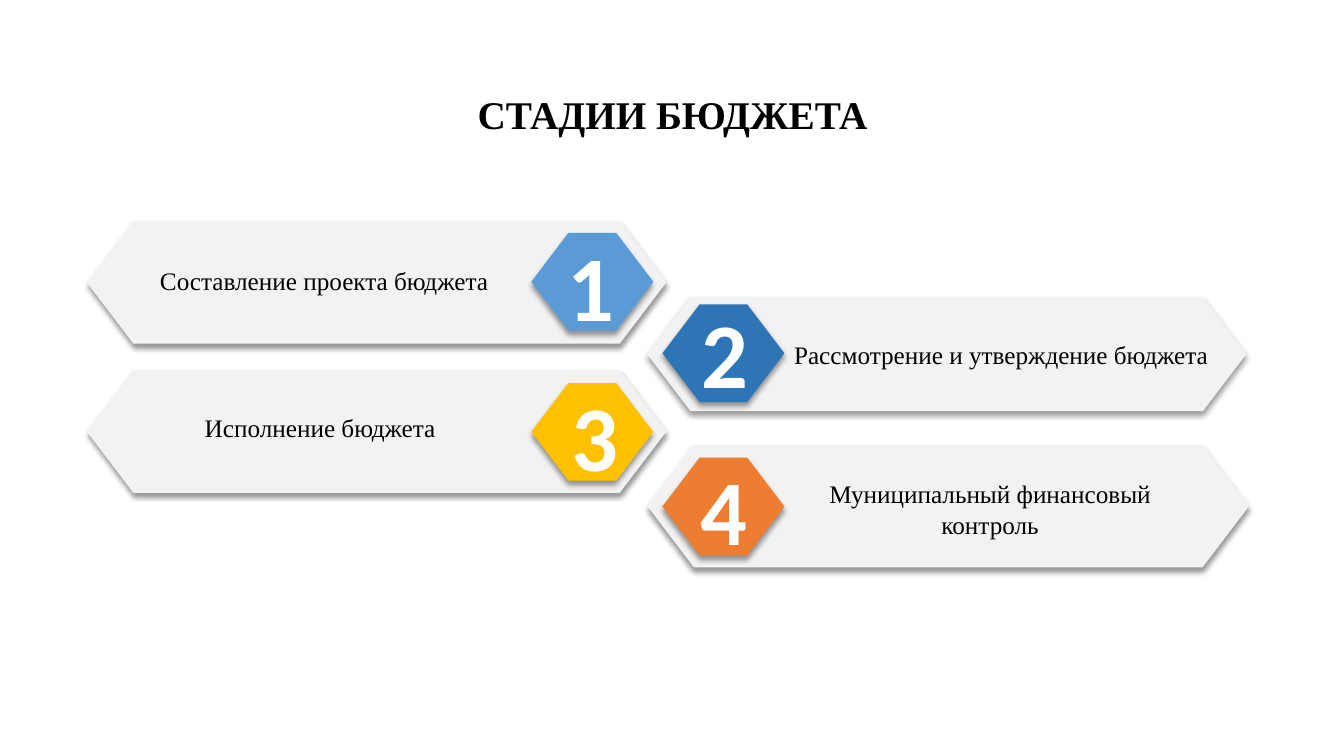
from lxml.etree import SubElement
from pptx import Presentation
from pptx.dml.color import RGBColor
from pptx.enum.shapes import MSO_SHAPE
from pptx.enum.text import MSO_ANCHOR, MSO_AUTO_SIZE, PP_ALIGN
from pptx.oxml.ns import qn
from pptx.util import Inches, Pt

COLORS = {
    "text": "000000",
    "white": "FFFFFF",
    "panel": "F2F2F2",
    "light_blue": "5B9BD5",
    "blue": "2E75B6",
    "yellow": "FFC000",
    "orange": "ED7D31",
}
BADGE_SIZE = (1.21, 0.97)
NUMBER_SIZE = (0.52, 0.6)
STAGES = [
    ("2", "Рассмотрение и утверждение бюджета", "blue",
     (6.42, 2.95, 5.94, 1.13), (6.57, 3.02), (7.65, 3.32, 4.56, 0.4), (6.93, 3.19)),
    ("4", "Муниципальный финансовый контроль", "orange",
     (6.42, 4.41, 5.97, 1.22), (6.57, 4.54), (7.68, 4.7, 4.28, 0.71), (6.92, 4.75)),
    ("1", "Составление проекта бюджета", "light_blue",
     (0.86, 2.19, 5.75, 1.22), (5.27, 2.31), (1.14, 2.58, 4.15, 0.4), (5.6, 2.52)),
    ("3", "Исполнение бюджета", "yellow",
     (0.86, 3.67, 5.75, 1.22), (5.27, 3.8), (1.1, 4.04, 4.15, 0.4), (5.64, 4.01)),
]


def inches(box):
    return [Inches(length) for length in box]


def write(frame, text, size=18, font="Times New Roman", color="text", bold=False,
          anchor=MSO_ANCHOR.TOP, inset=None, before=0, line_spacing=1.0,
          auto_size=MSO_AUTO_SIZE.NONE):
    frame.word_wrap = True
    frame.auto_size = auto_size
    frame.vertical_anchor = anchor
    if inset is not None:
        frame.margin_left = frame.margin_right = Inches(inset)
        frame.margin_top = frame.margin_bottom = Inches(inset)
    paragraph = frame.paragraphs[0]
    paragraph.alignment = PP_ALIGN.CENTER
    paragraph.space_before = Pt(before)
    paragraph.line_spacing = line_spacing
    run = paragraph.add_run()
    run.text = text
    run.font.size = Pt(size)
    run.font.name = font
    run.font.bold = bold
    run.font.color.rgb = RGBColor.from_string(COLORS[color])


def add_shadow(shape):
    shape.shadow.inherit = False
    effects = shape._element.spPr.find(qn("a:effectLst"))
    shadow = SubElement(effects, qn("a:outerShdw"), blurRad=str(Pt(4)),
                        dist=str(Pt(3)), dir="5400000", algn="t", rotWithShape="0")
    tint = SubElement(shadow, qn("a:srgbClr"), val=COLORS["text"])
    SubElement(tint, qn("a:alpha"), val="40000")


def add_hexagon(slide, box, color):
    hexagon = slide.shapes.add_shape(MSO_SHAPE.HEXAGON, *inches(box))
    hexagon.adjustments[0] = 0.38
    hexagon.fill.solid()
    hexagon.fill.fore_color.rgb = RGBColor.from_string(COLORS[color])
    hexagon.line.fill.background()
    add_shadow(hexagon)


def add_text(slide, box, text, **style):
    write(slide.shapes.add_textbox(*inches(box)).text_frame, text, **style)


def add_title(slide, box, text):
    title = slide.shapes.title
    title.left, title.top, title.width, title.height = inches(box)
    write(title.text_frame, text, size=28, bold=True,
          anchor=MSO_ANCHOR.MIDDLE, line_spacing=0.9)


def main():
    deck = Presentation()
    deck.slide_width, deck.slide_height = Inches(13.33), Inches(7.5)
    slide = deck.slides.add_slide(deck.slide_layouts[5])
    add_title(slide, (0.16, 0.95, 13.02, 0.42), "СТАДИИ БЮДЖЕТА")
    for number, stage, color, panel, badge, label, digit in STAGES:
        add_hexagon(slide, panel, "panel")
        add_hexagon(slide, badge + BADGE_SIZE, color)
        add_text(slide, label, stage, auto_size=MSO_AUTO_SIZE.SHAPE_TO_FIT_TEXT)
        add_text(slide, digit + NUMBER_SIZE, number, size=66, font="Calibri",
                 color="white", bold=True, anchor=MSO_ANCHOR.MIDDLE, inset=0, before=13)
    deck.save("out.pptx")


if __name__ == "__main__":
    main()
